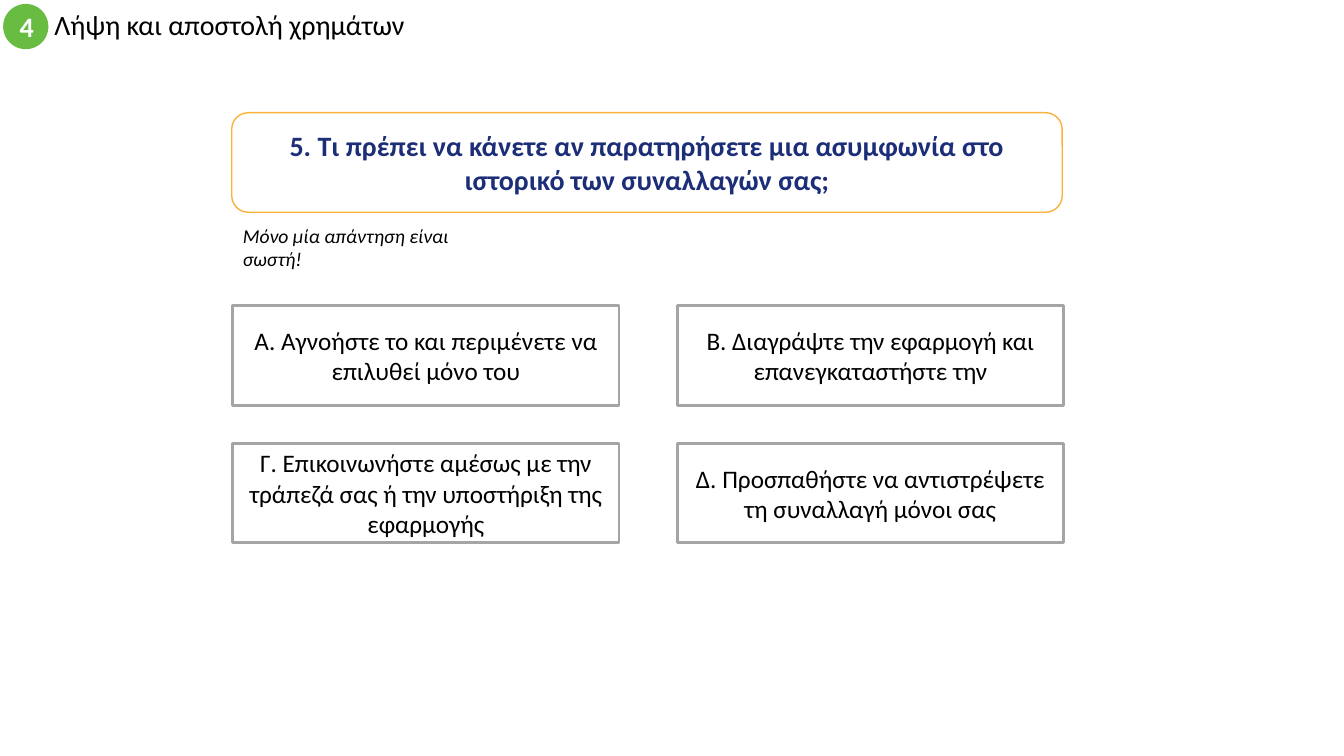
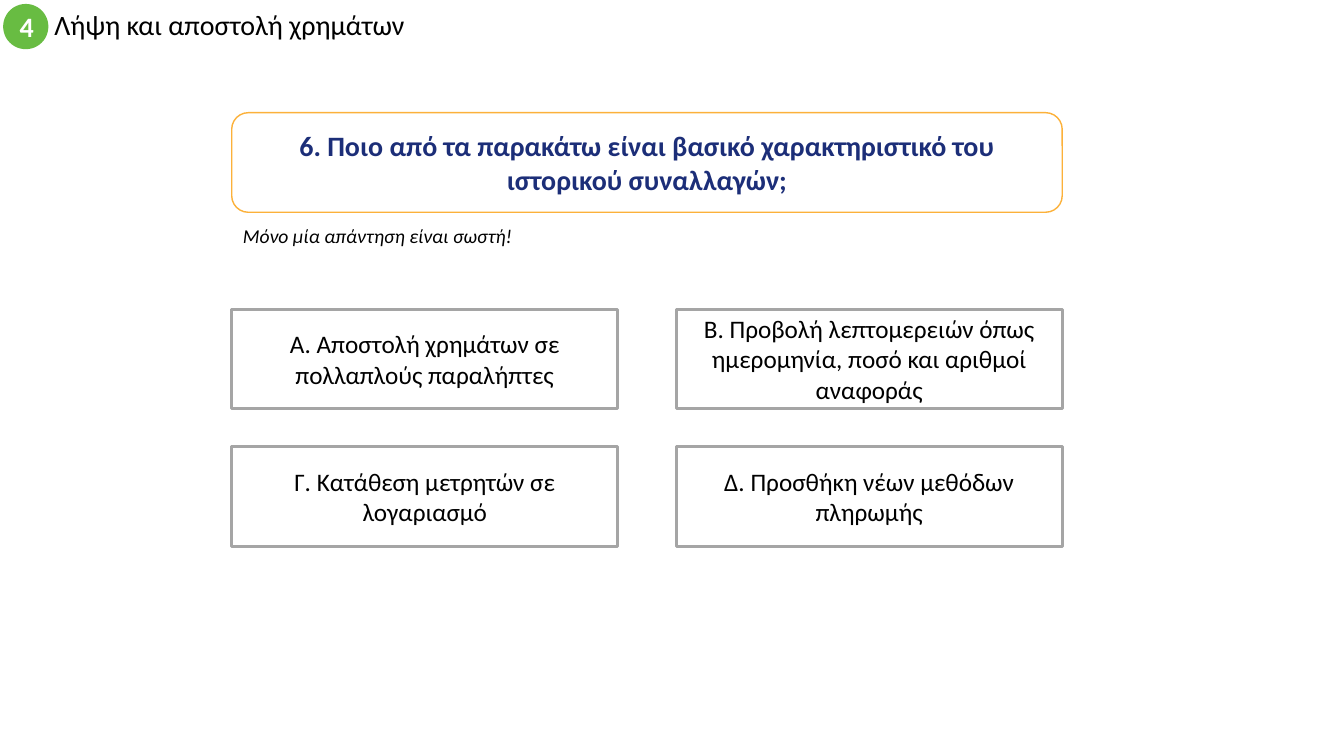
from pptx import Presentation
from pptx.dml.color import RGBColor
from pptx.enum.shapes import MSO_SHAPE as SHAPE
from pptx.enum.text import MSO_ANCHOR as ANCHOR, MSO_AUTO_SIZE as AUTO_SIZE, PP_ALIGN as ALIGN
from pptx.util import Cm, Pt

FONT = "Calibri"
COLORS = {
    "white": "FFFFFF",
    "black": "000000",
    "green": "68BC42",
    "orange": "FCB13A",
    "navy": "1C2E78",
    "gray": "A5A5A5",
}

SECTION_NUMBER = "4"
SECTION_TITLE = "Λήψη και αποστολή χρημάτων"
HINT = "Μόνο μία απάντηση είναι σωστή!"

HEADER_TOP, HEADER_HEIGHT = 0.1, 1.14
QUESTION_LEFT, QUESTION_TOP, QUESTION_WIDTH = 5.84, 2.84, 20.93
BOX_HEIGHT = 2.51
ANSWER_WIDTH = 9.73
COLUMN_STEP, ROW_STEP = 11.2, 3.47

QUIZ = [
    {
        "question": "5. Τι πρέπει να κάνετε αν παρατηρήσετε μια ασυμφωνία στο ιστορικό των συναλλαγών σας;",
        "hint_width": 5.99,
        "answers_at": (5.87, 7.7),
        "answers": [
            "A. Αγνοήστε το και περιμένετε να επιλυθεί μόνο του",
            "B. Διαγράψτε την εφαρμογή και επανεγκαταστήστε την",
            "Γ. Επικοινωνήστε αμέσως με την τράπεζά σας ή την υποστήριξη της εφαρμογής",
            "Δ. Προσπαθήστε να αντιστρέψετε τη συναλλαγή μόνοι σας",
        ],
    },
    {
        "question": "6. Ποιο από τα παρακάτω είναι βασικό χαρακτηριστικό του ιστορικού συναλλαγών;",
        "hint_width": 7.7,
        "answers_at": (5.84, 7.79),
        "answers": [
            "A. Αποστολή χρημάτων σε πολλαπλούς παραλήπτες",
            "B. Προβολή λεπτομερειών όπως ημερομηνία, ποσό και αριθμοί αναφοράς",
            "Γ. Κατάθεση μετρητών σε λογαριασμό",
            "Δ. Προσθήκη νέων μεθόδων πληρωμής",
        ],
    },
]


def rgb(name):
    return RGBColor.from_string(COLORS[name])


def write(frame, text, size=18, color="black", bold=False, italic=False,
          align=ALIGN.LEFT, anchor=ANCHOR.MIDDLE, line_spacing=None):
    frame.word_wrap = True
    frame.vertical_anchor = anchor
    paragraph = frame.paragraphs[0]
    paragraph.alignment = align
    paragraph.line_spacing = line_spacing
    run = paragraph.add_run()
    run.text = text
    font = run.font
    font.name, font.size = FONT, Pt(size)
    font.bold, font.italic = bold, italic
    font.color.rgb = rgb(color)


def add_box(slide, preset, bounds, text, fill="white", line=None, line_width=1, **text_format):
    """Add a filled shape with centred text; bounds are in centimetres."""
    box = slide.shapes.add_shape(preset, *map(Cm, bounds))
    box.shadow.inherit = False
    box.fill.solid()
    box.fill.fore_color.rgb = rgb(fill)
    if line:
        box.line.color.rgb = rgb(line)
        box.line.width = Pt(line_width)
    else:
        box.line.fill.background()
    write(box.text_frame, text, align=ALIGN.CENTER, **text_format)


def add_label(slide, bounds, text, **text_format):
    label = slide.shapes.add_textbox(*map(Cm, bounds))
    write(label.text_frame, text, **text_format)
    return label


def add_header(slide):
    add_box(slide, SHAPE.OVAL, (0.08, HEADER_TOP, HEADER_HEIGHT, HEADER_HEIGHT),
            SECTION_NUMBER, fill="green", size=20, color="white", bold=True)
    add_label(slide, (1.12, HEADER_TOP, 20.32, HEADER_HEIGHT),
              SECTION_TITLE, size=20, line_spacing=0.9)


def add_question(slide, question, hint_width):
    add_box(slide, SHAPE.ROUNDED_RECTANGLE,
            (QUESTION_LEFT, QUESTION_TOP, QUESTION_WIDTH, BOX_HEIGHT),
            question, line="orange", size=20, color="navy", bold=True)
    hint = add_label(slide, (5.87, 5.51, hint_width, 0.86), HINT,
                     size=14, italic=True, anchor=ANCHOR.TOP)
    hint.text_frame.auto_size = AUTO_SIZE.SHAPE_TO_FIT_TEXT


def add_answers(slide, answers, left, top):
    """Lay the answers out in two columns, row by row."""
    for index, answer in enumerate(answers):
        row, column = divmod(index, 2)
        add_box(slide, SHAPE.RECTANGLE,
                (left + column * COLUMN_STEP, top + row * ROW_STEP, ANSWER_WIDTH, BOX_HEIGHT),
                answer, line="gray", line_width=2)


def main():
    prs = Presentation()
    prs.slide_width, prs.slide_height = Cm(33.87), Cm(19.05)
    blank = prs.slide_layouts[6]
    for item in QUIZ:
        slide = prs.slides.add_slide(blank)
        add_header(slide)
        add_question(slide, item["question"], item["hint_width"])
        add_answers(slide, item["answers"], *item["answers_at"])
    prs.save("out.pptx")


if __name__ == "__main__":
    main()
